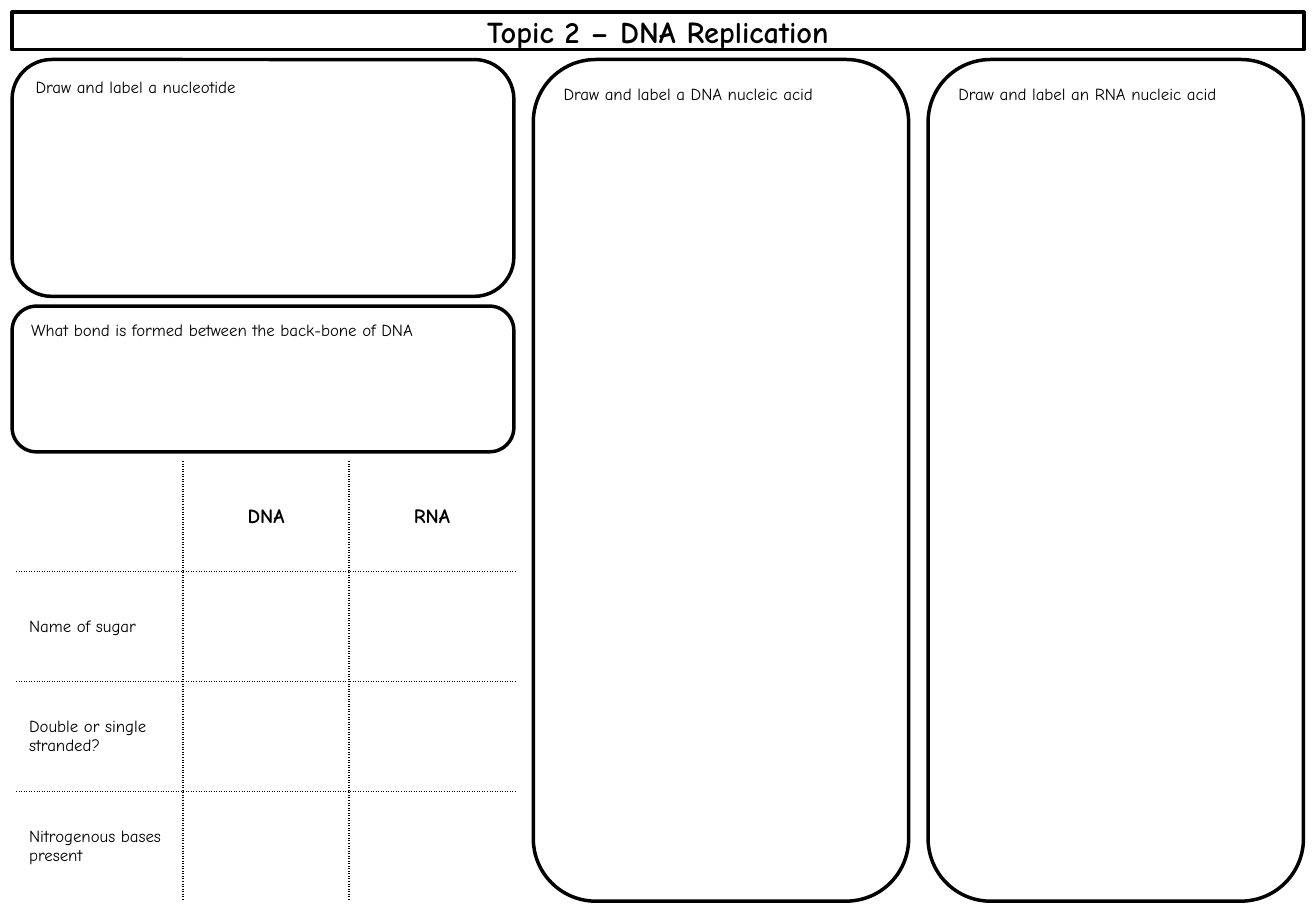
from lxml.etree import SubElement
from pptx import Presentation
from pptx.dml.color import RGBColor
from pptx.enum.shapes import MSO_SHAPE as Shape
from pptx.enum.text import MSO_ANCHOR as Anchor, MSO_AUTO_SIZE as AutoSize, PP_ALIGN as Align
from pptx.oxml.ns import qn
from pptx.util import Pt

TITLE = "Topic 2 – DNA Replication"
LEFT_PROMPTS = [
    ("Draw and label a nucleotide", 140.4),
    ("What bond is formed between the back-bone of DNA", 86.4),
]
TALL_PROMPTS = ["Draw and label a DNA nucleic acid", "Draw and label an RNA nucleic acid"]
COMPARISON = [
    ("", "DNA", "RNA"),
    ("Name of sugar", "", ""),
    ("Double or single stranded?", "", ""),
    ("Nitrogenous bases present", "", ""),
]

FONT, INK, PAPER = "Comic Neue", "000000", "FFFFFF"
SLIDE_W, SLIDE_H = 780, 547.2
MARGIN, TITLE_H = 7.2, 22.3
ROW_GAP, COLUMN_GAP = 5.8, 11.5
LEFT_W, TALL_W = 297.4, 222.5
BOTTOM = 534.3
TABLE_X, TABLE_W = 10.1, 295.2


def color(hex_code):
    return RGBColor.from_string(hex_code)


def write(frame, text, size, bold=False, align=Align.LEFT):
    paragraph = frame.paragraphs[0]
    paragraph.alignment = align
    run = paragraph.add_run()
    run.text = text
    run.font.name = FONT
    run.font.size = Pt(size)
    run.font.bold = bold
    run.font.color.rgb = color(INK)


def outline(box):
    box.line.color.rgb = color(INK)
    box.line.width = Pt(2.08)


def add_prompt(shapes, text, x, y, width, height):
    box = shapes.add_shape(Shape.ROUNDED_RECTANGLE, Pt(x), Pt(y), Pt(width), Pt(height))
    box.shadow.inherit = False
    box.fill.solid()
    box.fill.fore_color.rgb = color(PAPER)
    outline(box)
    box.text_frame.word_wrap = True
    box.text_frame.vertical_anchor = Anchor.TOP
    write(box.text_frame, text, 10)


def add_dotted_borders(cell, sides):
    properties = cell.fill._xPr
    for position, side in enumerate(sides):
        border = SubElement(properties, qn(f"a:ln{side}"), w=str(Pt(1)))
        properties.insert(position, border)
        fill = SubElement(border, qn("a:solidFill"))
        SubElement(fill, qn("a:srgbClr"), val=INK)
        SubElement(border, qn("a:prstDash"), val="sysDot")


def add_comparison(shapes, y):
    row_count, column_count = len(COMPARISON), len(COMPARISON[0])
    height = BOTTOM - y
    table = shapes.add_table(
        row_count, column_count, Pt(TABLE_X), Pt(y), Pt(TABLE_W), Pt(height)
    ).table
    table.first_row = table.horz_banding = False
    for r, entries in enumerate(COMPARISON):
        for c, entry in enumerate(entries):
            cell = table.cell(r, c)
            cell.fill.background()
            cell.vertical_anchor = Anchor.MIDDLE
            inner = {"L": c > 0, "R": c < column_count - 1, "T": r > 0, "B": r < row_count - 1}
            add_dotted_borders(cell, [side for side, shown in inner.items() if shown])
            if entry and r == 0:
                write(cell.text_frame, entry, 12, True, Align.CENTER)
            elif entry:
                write(cell.text_frame, entry, 10)


def main():
    deck = Presentation()
    deck.slide_width, deck.slide_height = Pt(SLIDE_W), Pt(SLIDE_H)
    slide = deck.slides.add_slide(deck.slide_layouts[5])

    heading = slide.shapes.title
    heading.left = heading.top = Pt(MARGIN)
    heading.width, heading.height = Pt(SLIDE_W - 2 * MARGIN), Pt(TITLE_H)
    outline(heading)
    heading.text_frame.auto_size = AutoSize.NONE
    heading.text_frame.vertical_anchor = Anchor.MIDDLE
    write(heading.text_frame, TITLE, 18, True, Align.CENTER)

    top = y = MARGIN + TITLE_H + ROW_GAP
    for prompt, height in LEFT_PROMPTS:
        add_prompt(slide.shapes, prompt, MARGIN, y, LEFT_W, height)
        y += height + ROW_GAP
    add_comparison(slide.shapes, y)

    x = MARGIN + LEFT_W + COLUMN_GAP
    for prompt in TALL_PROMPTS:
        add_prompt(slide.shapes, prompt, x, top, TALL_W, BOTTOM - top)
        x += TALL_W + COLUMN_GAP

    deck.save("out.pptx")


if __name__ == "__main__":
    main()
